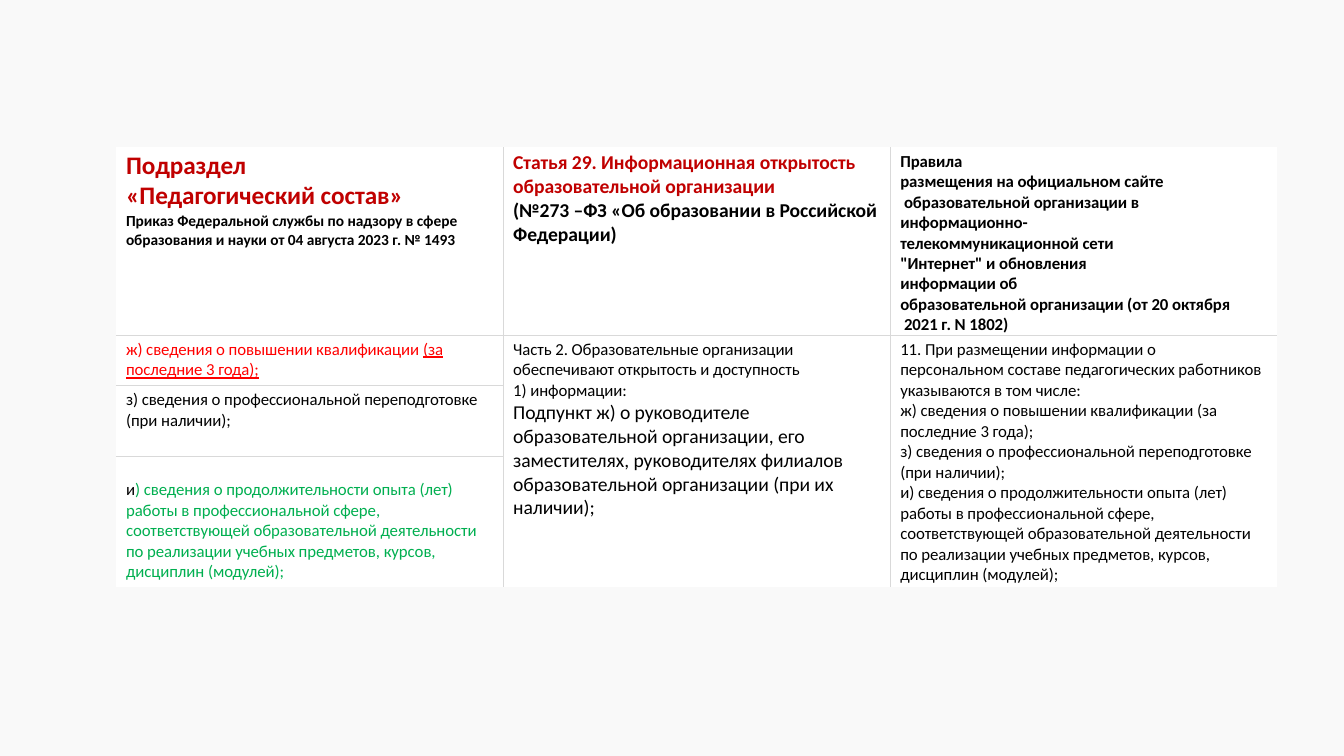
import pptx
import pptx.util
import pptx.dml.color
from lxml import etree

Inches, Pt, RGB = pptx.util.Inches, pptx.util.Pt, pptx.dml.color.RGBColor

BACKDROP = RGB(0xF9, 0xF9, 0xF9)
WHITE = RGB(0xFF, 0xFF, 0xFF)
GRID = RGB(0xD9, 0xD9, 0xD9)
BLACK = RGB(0, 0, 0)
DARK_RED = RGB(0xC0, 0, 0)
RED = RGB(0xFF, 0, 0)
GREEN = RGB(0, 0xAF, 0x50)

# Content: each cell is a list of paragraphs, each paragraph a list of (text, format)
HEAD_1 = dict(size=18, color=DARK_RED, bold=True)
HEAD_2 = dict(size=14, color=DARK_RED, bold=True)
HEAD_2_LAW = dict(size=14, bold=True)
HEAD_3 = dict(bold=True)
ORDER = dict(size=11, bold=True)
BIG = dict(size=14)
QUALIFICATION = "ж) сведения о повышении квалификации "
RETRAINING = "з) сведения о профессиональной переподготовке"
EXPERIENCE = (") сведения о продолжительности опыта (лет)\nработы в профессиональной сфере,\n"
              "соответствующей образовательной деятельности\n"
              "по реализации учебных предметов, курсов,\nдисциплин (модулей);")

CELLS = {
    (0, 0): [
        [("Подраздел", HEAD_1)],
        [("«Педагогический состав»", HEAD_1)],
        [("Приказ Федеральной службы по надзору в сфере", ORDER)],
        [("образования и науки от 04 августа 2023 г. № 1493", ORDER)],
    ],
    (0, 1): [
        [("Статья 29. Информационная открытость", HEAD_2)],
        [("образовательной организации", HEAD_2)],
        [("(№273 –ФЗ «Об образовании в Российской", HEAD_2_LAW)],
        [("Федерации)", HEAD_2_LAW)],
    ],
    (0, 2): [
        [("Правила", HEAD_3)],
        [("размещения на официальном сайте\n образовательной организации в", HEAD_3)],
        [("информационно-\nтелекоммуникационной сети", HEAD_3)],
        [("\"Интернет\" и обновления\nинформации об", HEAD_3)],
        [("образовательной организации (от 20 октября\n 2021 г. N 1802)", HEAD_3)],
    ],
    (1, 0): [
        [(QUALIFICATION, dict(color=RED)), ("(за", dict(color=RED, underline=True))],
        [("последние 3 года);", dict(color=RED, underline=True))],
    ],
    (1, 1): [
        [("Часть 2. Образовательные организации", {})],
        [("обеспечивают открытость и доступность", {})],
        [("1) информации:", {})],
        [("Подпункт ж) о руководителе", BIG)],
        [("образовательной организации, его\nзаместителях, руководителях филиалов\n"
          "образовательной организации (при их\nналичии);", BIG)],
    ],
    (1, 2): [
        [("11. При размещении информации о", {})],
        [("персональном составе педагогических работников\nуказываются в том числе:", {})],
        [(QUALIFICATION + "(за", {})],
        [("последние 3 года);", {})],
        [(RETRAINING + "\n(при наличии);", {})],
        [("и" + EXPERIENCE, {})],
    ],
    (2, 0): [
        [(RETRAINING, {})],
        [("(при наличии);", {})],
    ],
    (3, 0): [
        [("и", {}), (EXPERIENCE, dict(color=GREEN))],
    ],
}

# Layout
LEFT, TOP, COL_WIDTH = 1.15, 1.46, 3.84
ROW_HEIGHTS = [1.5, 0.5, 0.7, 1.3]
COLS, ROWS = 3, len(ROW_HEIGHTS)
TOP_MARGINS = {(0, 0): 0.03, (3, 0): 0.23}


def add_text(p, text, size=12, color=BLACK, bold=False, underline=False):
    for i, line in enumerate(text.split("\n")):
        if i:
            p.add_line_break()
        r = p.add_run()
        r.text = line
        r.font.name = "Calibri"
        r.font.size = Pt(size)
        r.font.color.rgb = color
        r.font.bold = bold
        r.font.underline = underline
        r.font._element.set("spc", "-5")


def set_borders(cell, grey_sides):
    tc_pr = cell._tc.get_or_add_tcPr()
    for side in "LRTB":
        ln = etree.SubElement(tc_pr, pptx.oxml.ns.qn("a:ln" + side), w=str(Pt(1)))
        if side in grey_sides:
            fill = etree.SubElement(ln, pptx.oxml.ns.qn("a:solidFill"))
            etree.SubElement(fill, pptx.oxml.ns.qn("a:srgbClr"), val=str(GRID))
        else:
            etree.SubElement(ln, pptx.oxml.ns.qn("a:noFill"))


def has_line_below(row, col):
    return row == 0 or (col == 0 and 0 < row < ROWS - 1)


prs = pptx.Presentation()
prs.slide_width, prs.slide_height = Inches(13.33), Inches(7.5)
s = prs.slides.add_slide(prs.slide_layouts[6])
s.background.fill.solid()
s.background.fill.fore_color.rgb = BACKDROP

# Table grid
table = s.shapes.add_table(ROWS, COLS, Inches(LEFT), Inches(TOP),
                           Inches(COL_WIDTH * COLS), Inches(sum(ROW_HEIGHTS))).table
table.first_row = table.horz_banding = False
for column in table.columns:
    column.width = Inches(COL_WIDTH)
for row, height in zip(table.rows, ROW_HEIGHTS):
    row.height = Inches(height)
for col in (1, 2):
    table.cell(1, col).merge(table.cell(ROWS - 1, col))

# Borders between cells, fills and margins
for row in range(ROWS):
    for col in range(COLS):
        cell = table.cell(row, col)
        sides = ("L" if col else "") + ("R" if col < COLS - 1 else "")
        sides += "T" if row and has_line_below(row - 1, col) else ""
        sides += "B" if has_line_below(row, col) else ""
        set_borders(cell, sides)
        cell.fill.solid()
        cell.fill.fore_color.rgb = WHITE
        cell.margin_left = Inches(0.1)
        cell.margin_right = cell.margin_bottom = 0
        cell.margin_top = Inches(TOP_MARGINS.get((row, col), 0.04))

# Cell text
for (row, col), paragraphs in CELLS.items():
    tf = table.cell(row, col).text_frame
    for i, parts in enumerate(paragraphs):
        p = tf.add_paragraph() if i else tf.paragraphs[0]
        for text, style in parts:
            add_text(p, text, **style)

prs.save("out.pptx")
